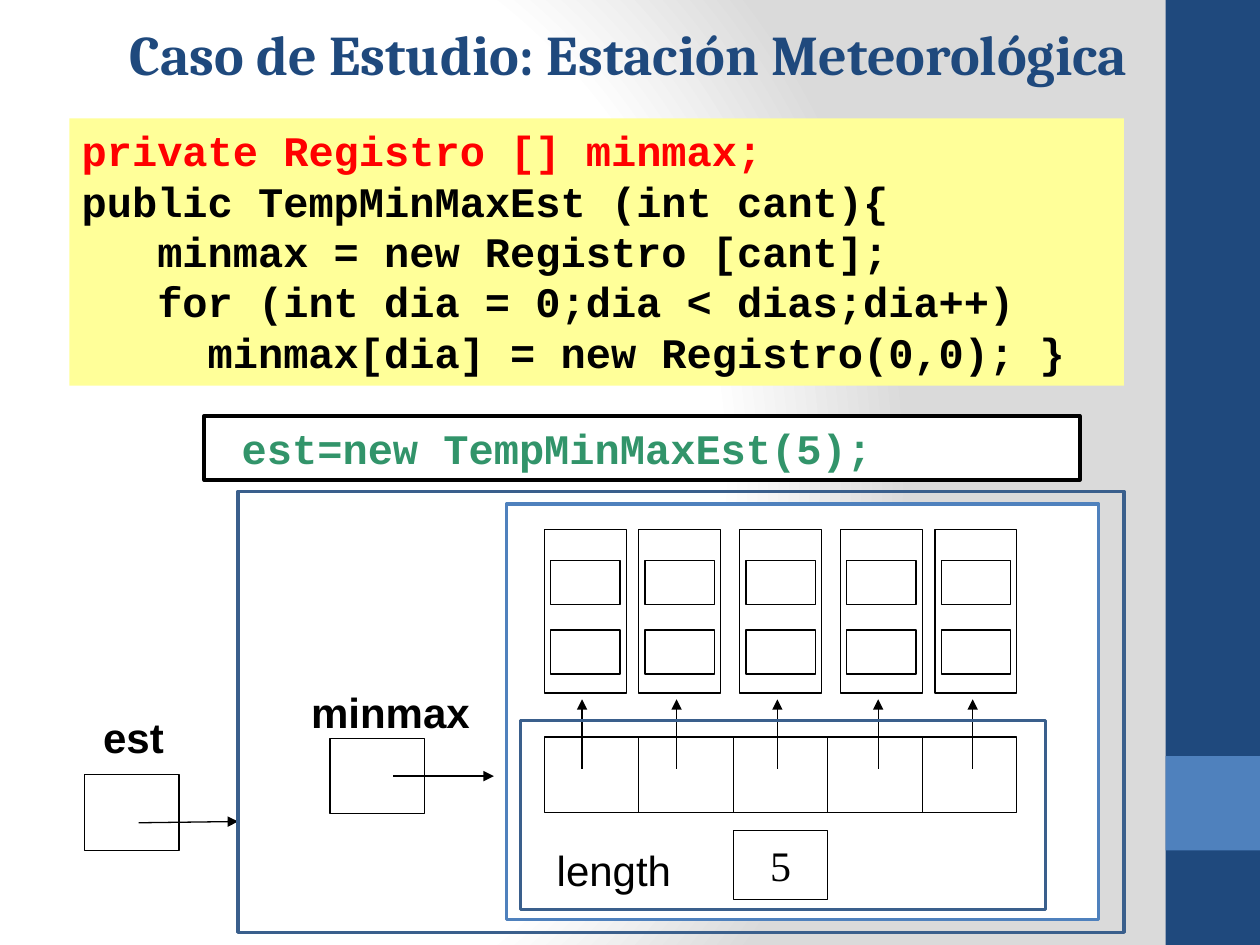
from lxml import etree
from pptx import Presentation
from pptx.dml.color import RGBColor
from pptx.enum.shapes import MSO_CONNECTOR, MSO_SHAPE
from pptx.enum.text import MSO_ANCHOR, MSO_AUTO_SIZE, PP_ALIGN
from pptx.oxml import parse_xml
from pptx.oxml.ns import qn
from pptx.util import Inches, Pt

RECTANGLE = MSO_SHAPE.RECTANGLE
STRAIGHT = MSO_CONNECTOR.STRAIGHT
MIDDLE = MSO_ANCHOR.MIDDLE
TOP = MSO_ANCHOR.TOP
CENTER = PP_ALIGN.CENTER
LEFT = PP_ALIGN.LEFT
GROW = MSO_AUTO_SIZE.SHAPE_TO_FIT_TEXT
FIXED = MSO_AUTO_SIZE.NONE

NAVY = RGBColor(0x1F, 0x49, 0x7D)
BLUE = RGBColor(0x4F, 0x81, 0xBD)
STEEL = RGBColor(0x3A, 0x5F, 0x8C)
YELLOW = RGBColor(0xFF, 0xFF, 0x99)
GREEN = RGBColor(0x32, 0x94, 0x6A)
RED = RGBColor(0xFF, 0x00, 0x00)
BLACK = RGBColor(0x00, 0x00, 0x00)
WHITE = RGBColor(0xFF, 0xFF, 0xFF)
GREY = RGBColor(0xDA, 0xDA, 0xDA)

SLIDE_WIDTH, SLIDE_HEIGHT = Inches(10), Inches(7.5)
COLUMNS, ROWS = 100, 75
CODE_CHARACTER = Pt(14.4)

CODE_FONT = {"name": "Courier New", "size": Pt(24), "bold": True}
LABEL_FONT = {"name": "Arial", "size": Pt(24), "bold": True}
LENGTH_FONT = {"name": "Arial", "size": Pt(24), "bold": False}
VALUE_FONT = {"name": "Times New Roman", "size": Pt(24), "bold": False}
TITLE_FONT = {"name": "Cambria", "size": Pt(32), "bold": True}

# Text, leading characters of indentation, colour
CODE_LINES = [
    ("private Registro [] minmax;", 0, RED),
    ("public TempMinMaxEst (int cant){", 0, BLACK),
    ("minmax = new Registro [cant];", 3, BLACK),
    ("for (int dia = 0;dia < dias;dia++)", 3, BLACK),
    ("minmax[dia] = new Registro(0,0); }", 5, BLACK),
]

CELL_WIDTH, CELL_HEIGHT = 7.5, 6
ARRAY_LEFT, ARRAY_TOP = 43.2, 58.5
RECORD_SHIFTS = [0, 0, 0.5, 1, 1]


def across(columns):
    return round(SLIDE_WIDTH * columns / COLUMNS)


def down(rows):
    return round(SLIDE_HEIGHT * rows / ROWS)


def grid_box(left, top, width, height):
    return across(left), down(top), across(width), down(height)


def set_background(slide):
    """Fill the background with a radial gradient."""
    slide.background.fill.solid()
    properties = slide.element.xpath("p:cSld/p:bg/p:bgPr")[0]
    stops = "".join(
        f'<a:gs pos="{share * 1000}"><a:srgbClr val="{color}"/></a:gs>'
        for share, color in ((0, WHITE), (75, WHITE), (100, GREY))
    )
    gradient = parse_xml(
        '<a:gradFill xmlns:a="http://schemas.openxmlformats.org/drawingml/2006/main"'
        f' rotWithShape="1"><a:gsLst>{stops}</a:gsLst><a:path path="circle">'
        '<a:fillToRect l="20000" t="50000" r="100000" b="50000"/>'
        "</a:path></a:gradFill>"
    )
    properties.replace(properties.find(qn("a:solidFill")), gradient)


def add_box(slide, box, fill=None, line=None, line_width=0.75):
    shape = slide.shapes.add_shape(RECTANGLE, *grid_box(*box))
    shape.shadow.inherit = False
    if fill is None:
        shape.fill.background()
    else:
        shape.fill.solid()
        shape.fill.fore_color.rgb = fill
    if line is None:
        shape.line.fill.background()
    else:
        shape.line.color.rgb = line
        shape.line.width = Pt(line_width)
    return shape


def write_lines(shape, lines, font, align=LEFT, anchor=TOP, auto_size=GROW, wrap=True):
    """Write (text, indentation, colour) lines as paragraphs of a shape."""
    frame = shape.text_frame
    frame_format = {"word_wrap": wrap, "auto_size": auto_size, "vertical_anchor": anchor}
    for name, value in frame_format.items():
        setattr(frame, name, value)
    for index, (text, indentation, color) in enumerate(lines):
        paragraph = frame.add_paragraph() if index else frame.paragraphs[0]
        paragraph.alignment = align
        if indentation:
            properties = paragraph._p.get_or_add_pPr()
            properties.set("marL", str(indentation * CODE_CHARACTER))
        run = paragraph.add_run()
        run.text = text
        for name, value in font.items():
            setattr(run.font, name, value)
        run.font.color.rgb = color


def add_label(slide, box, text, font, color=BLACK, **layout):
    label = slide.shapes.add_textbox(*grid_box(*box))
    write_lines(label, [(text, 0, color)], font, **layout)


def add_arrow(slide, start, end):
    arrow = slide.shapes.add_connector(
        STRAIGHT, across(start[0]), down(start[1]), across(end[0]), down(end[1])
    )
    arrow.line.color.rgb = BLACK
    arrow.line.width = Pt(0.75)
    line = arrow.line._get_or_add_ln()
    etree.SubElement(line, qn("a:tailEnd"), type="triangle")
    etree.SubElement(arrow._element.spPr, qn("a:effectLst"))


def add_record(slide, left):
    """Draw a record with its two fields and the arrow that points to it."""
    add_arrow(slide, (left + 3, 61), (left + 3, 55.5))
    add_box(slide, (left, 42, 6.5, 13), line=BLACK)
    for top in (44.5, 50):
        add_box(slide, (left + 0.5, top, 5.5, 3.5), line=BLACK)


def add_array(slide):
    for index, shift in enumerate(RECORD_SHIFTS):
        left = ARRAY_LEFT + index * CELL_WIDTH
        add_box(slide, (left, ARRAY_TOP, CELL_WIDTH, CELL_HEIGHT), line=BLACK)
        add_record(slide, left + shift)
    length = add_box(
        slide, (ARRAY_LEFT + 2 * CELL_WIDTH, 65.9, CELL_WIDTH, 5.5), WHITE, BLACK
    )
    write_lines(length, [("5", 0, BLACK)], VALUE_FONT, CENTER, MIDDLE, FIXED, False)
    add_label(slide, (ARRAY_LEFT, 66.5, 12.5, 5), "length", LENGTH_FONT)


def add_references(slide):
    add_box(slide, (6.7, 61.5, CELL_WIDTH, CELL_HEIGHT), line=BLACK)
    add_label(slide, (7.2, 56, 10.5, 5), "est", LABEL_FONT)
    add_arrow(slide, (11, 65.3), (18.9, 65.2))
    add_box(slide, (26.2, 58.6, CELL_WIDTH, CELL_HEIGHT), line=BLACK)
    add_label(slide, (23.7, 54, 15.5, 5.1), "minmax", LABEL_FONT)
    add_arrow(slide, (31.2, 61.6), (39.2, 61.6))


def main():
    presentation = Presentation()
    presentation.slide_width, presentation.slide_height = SLIDE_WIDTH, SLIDE_HEIGHT
    slide = presentation.slides.add_slide(presentation.slide_layouts[6])
    set_background(slide)
    add_box(slide, (92.5, 0, 7.5, ROWS), NAVY)
    add_box(slide, (92.5, 60, 7.5, 7.5), BLUE)

    code = add_box(slide, (5.5, 9.4, 83.7, 21.2), YELLOW)
    write_lines(code, CODE_LINES, CODE_FONT)
    add_box(slide, (40.2, 40, 47, 33), WHITE, BLUE, 2)
    add_references(slide)
    add_array(slide)
    add_label(
        slide, (5, 0.9, 89.8, 6.6), "Caso de Estudio: Estación Meteorológica",
        TITLE_FONT, NAVY, align=CENTER, anchor=MIDDLE, auto_size=FIXED,
    )
    add_box(slide, (18.9, 39, 70.3, 35), line=STEEL, line_width=2)
    call = add_box(slide, (16.2, 33, 69.5, 5.1), WHITE, BLACK, 2)
    write_lines(call, [("est=new TempMinMaxEst(5);", 1, GREEN)], CODE_FONT)
    add_box(slide, (41.3, 57.2, 41.7, 15), line=STEEL, line_width=2)
    presentation.save("out.pptx")


if __name__ == "__main__":
    main()
